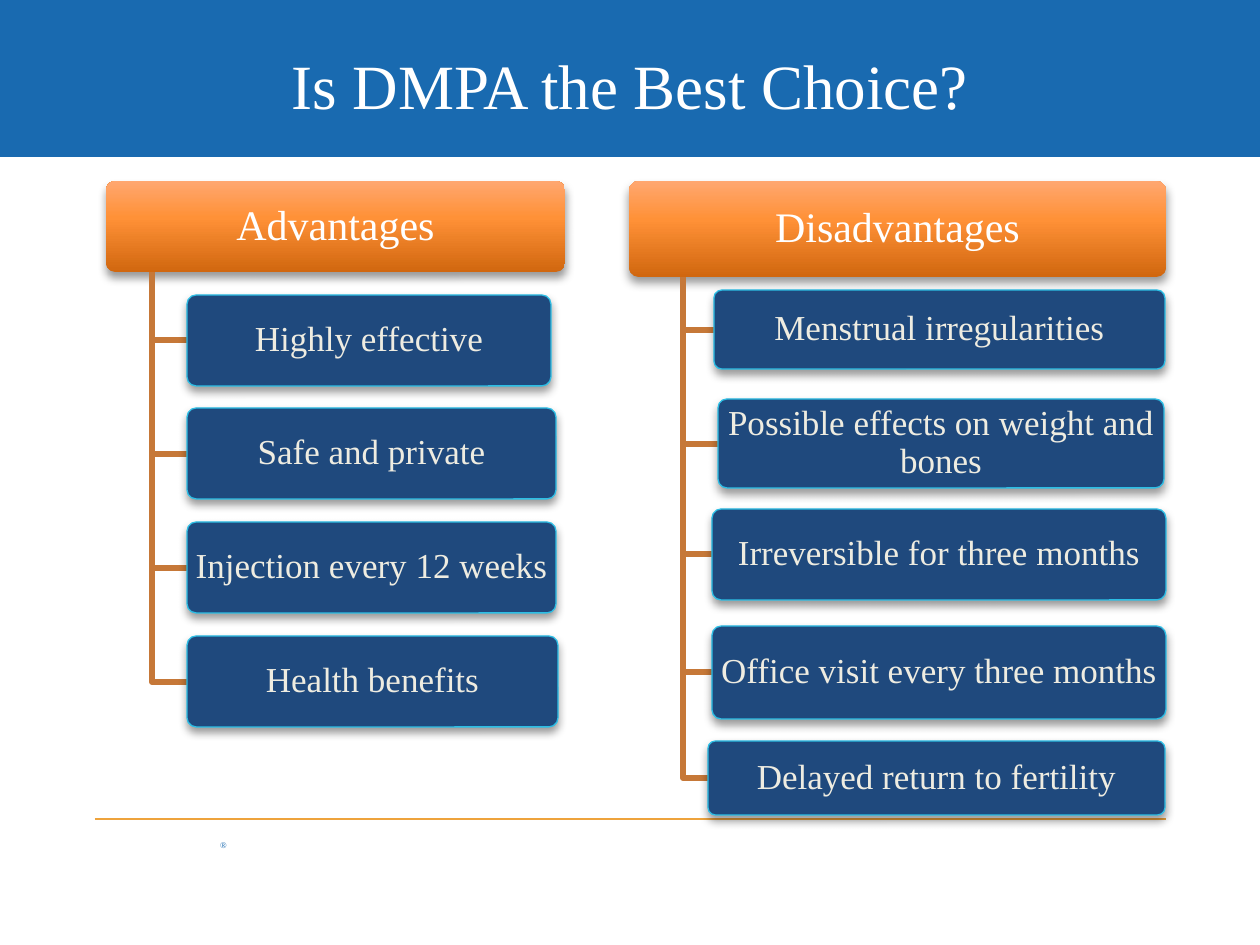
import copy

import pptx
import pptx.dml.color
import pptx.enum.shapes
import pptx.enum.text
import pptx.oxml
import pptx.oxml.ns
import pptx.oxml.xmlchemy
import pptx.util

SCALE = 914400 / 126
FONT = "Times New Roman"
BLUE = pptx.dml.color.RGBColor(0x19, 0x6A, 0xB0)
NAVY = pptx.dml.color.RGBColor(0x1F, 0x49, 0x7D)
CYAN = pptx.dml.color.RGBColor(0x2C, 0xBE, 0xE5)
CREAM = pptx.dml.color.RGBColor(0xEE, 0xEC, 0xE1)
WHITE = pptx.dml.color.RGBColor(0xFF, 0xFF, 0xFF)
GOLD = pptx.dml.color.RGBColor(0xEE, 0xA3, 0x3C)
BROWN = pptx.dml.color.RGBColor(0xC6, 0x78, 0x38)
ORANGES = [
    (0, pptx.dml.color.RGBColor(0xD1, 0x67, 0x0F)),
    (0.6, pptx.dml.color.RGBColor(0xFF, 0x91, 0x37)),
    (1, pptx.dml.color.RGBColor(0xFF, 0xA7, 0x70)),
]
SHADOW = (
    '<a:outerShdw xmlns:a="http://schemas.openxmlformats.org/drawingml/2006/main" '
    'blurRad="66000" dist="38100" dir="5400000" rotWithShape="0">'
    '<a:srgbClr val="000000"><a:alpha val="40000"/></a:srgbClr></a:outerShdw>'
)


def px(*lengths):
    return [pptx.util.Emu(round(length * SCALE)) for length in lengths]


def add_text(text, place, size, color, card=False, fill=None, line=None,
             margins=(13, 6), spacing=1, align=pptx.enum.text.PP_ALIGN.CENTER):
    if card:
        box = page.shapes.add_shape(
            pptx.enum.shapes.MSO_SHAPE.ROUNDED_RECTANGLE, *px(*place))
        box.adjustments[0] = 0.1
        box.shadow.inherit = False
        effects = box._element.spPr.find(pptx.oxml.ns.qn("a:effectLst"))
        effects.append(pptx.oxml.parse_xml(SHADOW))
        if fill is None:
            box.fill.gradient()
            box.fill.gradient_angle = 90
            stops = box._element.spPr.find(".//" + pptx.oxml.ns.qn("a:gsLst"))
            stops.append(copy.deepcopy(stops[0]))
            for stop, (position, shade) in zip(box.fill.gradient_stops, ORANGES):
                stop.position = position
                stop.color.rgb = shade
        else:
            box.fill.solid()
            box.fill.fore_color.rgb = fill
        if line is None:
            box.line.fill.background()
        else:
            box.line.color.rgb = line
            box.line.width = pptx.util.Pt(0.75)
    else:
        box = page.shapes.add_textbox(*px(*place))
    frame = box.text_frame
    frame.word_wrap = True
    frame.vertical_anchor = pptx.enum.text.MSO_ANCHOR.MIDDLE
    frame.margin_left, frame.margin_top = px(*margins)
    frame.margin_right, frame.margin_bottom = px(*margins)
    para = frame.paragraphs[0]
    para.alignment = align
    para.line_spacing = spacing
    span = para.add_run()
    span.text = text
    span.font.name = FONT
    span.font.size = pptx.util.Pt(size)
    span.font.color.rgb = color


deck = pptx.Presentation()
deck.slide_width, deck.slide_height = px(1260, 945)
page = deck.slides.add_slide(deck.slide_layouts[6])

band = page.shapes.add_shape(
    pptx.enum.shapes.MSO_SHAPE.RECTANGLE, *px(0, 0, 1260, 157))
band.shadow.inherit = False
band.fill.solid()
band.fill.fore_color.rgb = BLUE
band.line.fill.background()

add_text("®", (220, 840, 32, 10), 5, BLUE, margins=(0, 0),
         align=pptx.enum.text.PP_ALIGN.LEFT)

rule = page.shapes.add_connector(
    pptx.enum.shapes.MSO_CONNECTOR.STRAIGHT, *px(95, 819, 1166, 819))
rule.line.color.rgb = GOLD
rule.line.width = pptx.util.Pt(0.75)
rule._element.spPr.append(pptx.oxml.xmlchemy.OxmlElement("a:effectLst"))

add_text("Is DMPA the Best Choice?", (63, 21, 1134, 126), 36, WHITE)

branches = [
    ("Advantages", (106, 181, 459, 91), 152, [
        ("Highly effective", (187, 295, 364, 91)),
        ("Safe and private", (187, 408, 369, 91)),
        ("Injection every 12 weeks", (187, 522, 369, 91)),
        ("Health benefits", (187, 636, 371, 91)),
    ]),
    ("Disadvantages", (629, 181, 537, 96), 683, [
        ("Menstrual irregularities", (714, 290, 451, 79)),
        ("Possible effects on weight and bones", (718, 399, 446, 89)),
        ("Irreversible for three months", (712, 509, 454, 91)),
        ("Office visit every three months", (712, 626, 454, 93)),
        ("Delayed return to fertility", (708, 741, 457, 74)),
    ]),
]
for heading, place, trunk, items in branches:
    add_text(heading, place, 24, WHITE, card=True, margins=(6, 4), spacing=0.9)
    trunk_top = place[1] + place[3]
    for item, (left, top, width, height) in items:
        middle = top + height / 2
        builder = page.shapes.build_freeform(trunk, trunk_top, scale=SCALE)
        builder.add_line_segments([(trunk, middle), (left, middle)], close=False)
        elbow = builder.convert_to_shape()
        elbow.shadow.inherit = False
        elbow.fill.background()
        elbow.line.color.rgb = BROWN
        elbow.line.width = pptx.util.Pt(3.35)
        add_text(item, (left, top, width, height), 20, CREAM, card=True,
                 fill=NAVY, line=CYAN, margins=(5, 4), spacing=0.9)

deck.save("out.pptx")
